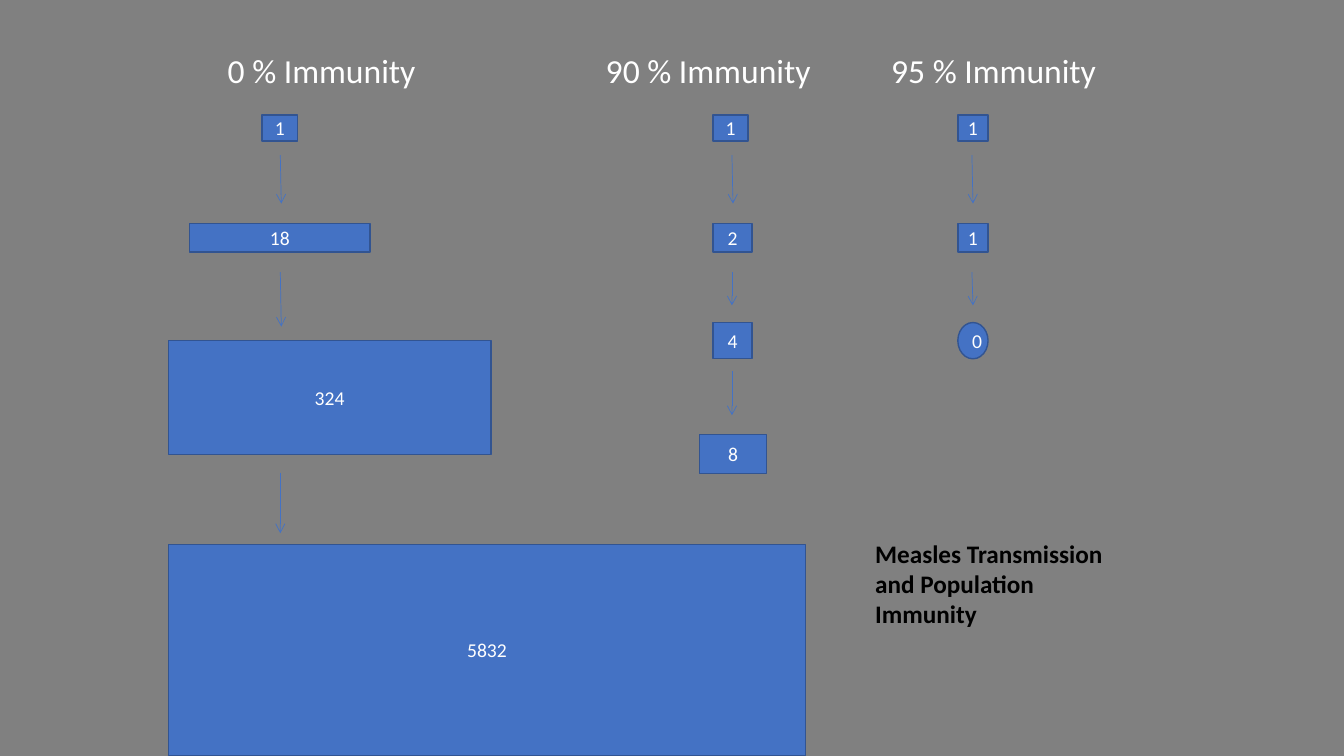
from dataclasses import dataclass

from lxml import etree
from pptx import Presentation
from pptx.dml.color import RGBColor
from pptx.enum.shapes import MSO_CONNECTOR, MSO_SHAPE
from pptx.enum.text import MSO_ANCHOR, MSO_AUTO_SIZE, PP_ALIGN
from pptx.oxml.ns import qn
from pptx.slide import Slide
from pptx.text.text import TextFrame
from pptx.util import Inches, Pt

RECT = MSO_SHAPE.RECTANGLE
OVAL = MSO_SHAPE.OVAL
STRAIGHT = MSO_CONNECTOR.STRAIGHT
LEFT, CENTER = PP_ALIGN.LEFT, PP_ALIGN.CENTER
TOP, MIDDLE = MSO_ANCHOR.TOP, MSO_ANCHOR.MIDDLE
NO_FIT = MSO_AUTO_SIZE.NONE

GRAY = RGBColor(0x80, 0x80, 0x80)
BLUE = RGBColor(0x44, 0x72, 0xC4)
NAVY = RGBColor(0x32, 0x54, 0x91)
WHITE = RGBColor(0xFF, 0xFF, 0xFF)
BLACK = RGBColor(0x00, 0x00, 0x00)
FONT = "Calibri"


@dataclass
class Case:
    count: str
    left: float
    top: float
    width: float
    height: float
    kind: MSO_SHAPE = RECT


@dataclass
class Arrow:
    start: float
    end: float
    shift: float = 0


@dataclass
class Chain:
    """One immunity level: its heading, case boxes and arrows."""
    head: str
    left: float
    width: float
    axis: float
    cases: list[Case]
    arrows: list[Arrow]


CHAINS = [
    Chain("0 % Immunity", 2.16, 2.43, 2.78,
          [Case("1", 2.6, 1.14, 0.35, 0.26),
           Case("18", 1.88, 2.22, 1.79, 0.28),
           Case("324", 1.67, 3.38, 3.2, 1.13),
           Case("5832", 1.67, 5.4, 6.32, 2.1)],
          [Arrow(1.54, 2.02, 0.01), Arrow(2.7, 3.24, 0.01), Arrow(4.69, 5.29)]),
    Chain("90 % Immunity", 5.91, 2.27, 7.26,
          [Case("1", 7.07, 1.14, 0.35, 0.26),
           Case("2", 7.07, 2.22, 0.39, 0.28),
           Case("4", 7.07, 3.2, 0.39, 0.36),
           Case("8", 6.94, 4.31, 0.66, 0.39)],
          [Arrow(1.54, 2.02, 0.01), Arrow(2.7, 3.03), Arrow(3.68, 4.12)]),
    Chain("95 % Immunity", 8.74, 2.62, 9.64,
          [Case("1", 9.5, 1.14, 0.3, 0.26),
           Case("1", 9.5, 2.22, 0.3, 0.28),
           Case("0", 9.5, 3.2, 0.3, 0.36, OVAL)],
          [Arrow(1.54, 2.02, 0.01), Arrow(2.7, 3.03, 0.01)]),
]


def write(frame: TextFrame, text: str, size: int, color: RGBColor,
          align: PP_ALIGN = LEFT, anchor: MSO_ANCHOR = TOP,
          bold: bool = False) -> None:
    frame.text = text
    frame.word_wrap = True
    frame.auto_size = NO_FIT
    frame.vertical_anchor = anchor
    para = frame.paragraphs[0]
    para.alignment = align
    font = para.runs[0].font
    font.name, font.size, font.bold = FONT, Pt(size), bold
    font.color.rgb = color


def draw_case(slide: Slide, case: Case) -> None:
    box = slide.shapes.add_shape(
        case.kind, Inches(case.left), Inches(case.top),
        Inches(case.width), Inches(case.height))
    box.shadow.inherit = False
    box.fill.solid()
    box.fill.fore_color.rgb = BLUE
    box.line.color.rgb = NAVY
    box.line.width = Pt(1)
    write(box.text_frame, case.count, 14, WHITE, CENTER, MIDDLE)


def draw_arrow(slide: Slide, axis: float, arrow: Arrow) -> None:
    link = slide.shapes.add_connector(
        STRAIGHT, Inches(axis), Inches(arrow.start),
        Inches(axis + arrow.shift), Inches(arrow.end))
    link.line.color.rgb = BLUE
    link.line.width = Pt(0.5)
    props = link._element.spPr
    tip = etree.SubElement(props.find(qn("a:ln")), qn("a:tailEnd"))
    tip.set("type", "arrow")
    etree.SubElement(props, qn("a:effectLst"))


def draw_chain(slide: Slide, chain: Chain) -> None:
    head = slide.shapes.add_textbox(
        Inches(chain.left), Inches(0.45), Inches(chain.width), Inches(0.5))
    write(head.text_frame, chain.head, 24, WHITE)
    for case in chain.cases:
        draw_case(slide, case)
    for arrow in chain.arrows:
        draw_arrow(slide, chain.axis, arrow)


def draw_title(slide: Slide) -> None:
    title = slide.shapes.title
    title.left, title.top = Inches(8.58), Inches(5.29)
    title.width, title.height = Inches(2.78), Inches(1.01)
    write(title.text_frame, "Measles Transmission and Population Immunity",
          18, BLACK, bold=True)


def main() -> None:
    deck = Presentation()
    deck.slide_width, deck.slide_height = Inches(13.33), Inches(7.5)
    slide = deck.slides.add_slide(deck.slide_layouts.get_by_name("Title Only"))
    slide.background.fill.solid()
    slide.background.fill.fore_color.rgb = GRAY
    for chain in CHAINS:
        draw_chain(slide, chain)
    draw_title(slide)
    deck.save("out.pptx")


if __name__ == "__main__":
    main()
